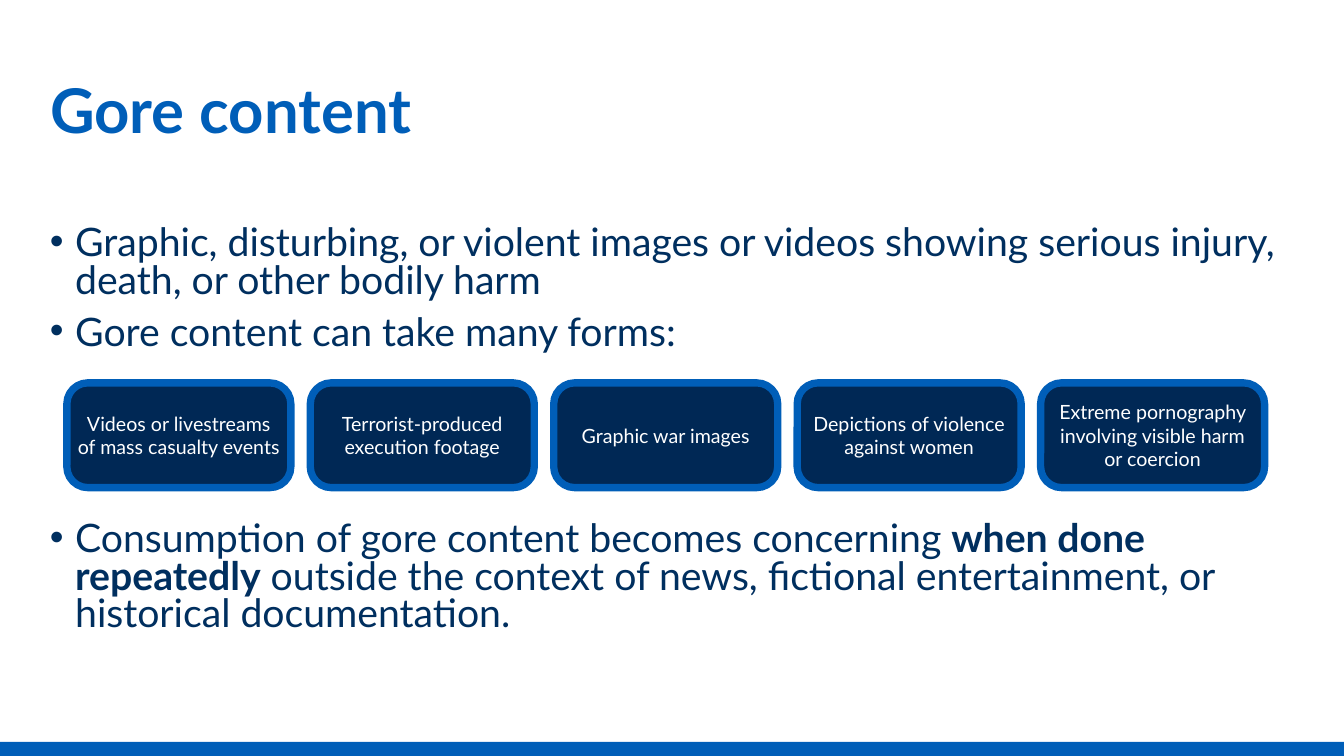
from dataclasses import dataclass

from lxml import etree
from pptx import Presentation
from pptx.dml.color import RGBColor
from pptx.enum.shapes import MSO_SHAPE
from pptx.enum.text import MSO_ANCHOR, MSO_AUTO_SIZE, PP_ALIGN
from pptx.oxml.ns import qn
from pptx.slide import Slide
from pptx.util import Pt

RECTANGLE = MSO_SHAPE.RECTANGLE
ROUNDED = MSO_SHAPE.ROUNDED_RECTANGLE
MIDDLE = MSO_ANCHOR.MIDDLE
NO_AUTOFIT = MSO_AUTO_SIZE.NONE
LEFT = PP_ALIGN.LEFT
CENTER = PP_ALIGN.CENTER

FONT = "Lato"
COLORS = {"blue": "005EB8", "text": "002F5F", "navy": "002855", "white": "FFFFFF"}
SLIDE_WIDTH, SLIDE_HEIGHT = 960, 540
MARGIN = 28.6
BAR_HEIGHT = 10.08
BULLET_INDENT = 18

CARD_LEFT, CARD_TOP = 47.8, 273.5
CARD_WIDTH, CARD_HEIGHT = 160, 74.8
CARD_PITCH = 173.88


@dataclass
class Bullet:
    text: str
    bold: str = ""
    ending: str = ""


@dataclass
class BulletBlock:
    top: float
    height: float
    bullets: list[Bullet]


BULLET_BLOCKS = [
    BulletBlock(158.4, 104, [
        Bullet("Graphic, disturbing, or violent images or videos showing serious injury, "
               "death, or other bodily harm"),
        Bullet("Gore content can take many forms:"),
    ]),
    BulletBlock(369.7, 96, [
        Bullet("Consumption of gore content becomes concerning ",
               bold="when done repeatedly",
               ending=" outside the context of news, fictional entertainment, "
                      "or historical documentation."),
    ]),
]
GORE_FORMS = [
    "Videos or livestreams of mass casualty events",
    "Terrorist-produced execution footage",
    "Graphic war images",
    "Depictions of violence against women",
    "Extreme pornography involving visible harm or coercion",
]


def color(name: str) -> RGBColor:
    return RGBColor.from_string(COLORS[name])


def set_font(paragraph, size: float, color_name: str) -> None:
    paragraph.font.name = FONT
    paragraph.font.size = Pt(size)
    paragraph.font.color.rgb = color(color_name)


def add_title(slide: Slide, text: str) -> None:
    title = slide.shapes.title
    title.left, title.top = Pt(MARGIN), Pt(28.8)
    title.width, title.height = Pt(687.6), Pt(104.4)
    frame = title.text_frame
    frame.text = text
    frame.auto_size = NO_AUTOFIT
    frame.vertical_anchor = MIDDLE
    heading = frame.paragraphs[0]
    heading.alignment = LEFT
    heading.line_spacing = 0.9
    set_font(heading, 44, "blue")
    heading.font.bold = True


def add_bullet_block(slide: Slide, block: BulletBlock) -> None:
    body = slide.shapes.add_textbox(
        Pt(MARGIN), Pt(block.top), Pt(894.24), Pt(block.height))
    frame = body.text_frame
    frame.word_wrap = True
    for index, bullet in enumerate(block.bullets):
        paragraph = frame.add_paragraph() if index else frame.paragraphs[0]
        properties = paragraph._p.get_or_add_pPr()
        properties.set("marL", str(Pt(BULLET_INDENT)))
        properties.set("indent", str(-Pt(BULLET_INDENT)))
        etree.SubElement(properties, qn("a:buFont"), typeface="Arial")
        etree.SubElement(properties, qn("a:buChar"), char="•")
        paragraph.line_spacing = 0.8
        if index:
            paragraph.space_before = Pt(10)
        set_font(paragraph, 28, "text")
        paragraph.add_run().text = bullet.text
        if bullet.bold:
            emphasis = paragraph.add_run()
            emphasis.text = bullet.bold
            emphasis.font.bold = True
            paragraph.add_run().text = bullet.ending


def add_card(slide: Slide, left: float, text: str) -> None:
    card = slide.shapes.add_shape(
        ROUNDED, Pt(left), Pt(CARD_TOP), Pt(CARD_WIDTH), Pt(CARD_HEIGHT))
    card.adjustments[0] = 0.2
    card.shadow.inherit = False
    card.fill.solid()
    card.fill.fore_color.rgb = color("navy")
    card.line.color.rgb = color("blue")
    card.line.width = Pt(5.25)
    frame = card.text_frame
    frame.word_wrap = True
    frame.vertical_anchor = MIDDLE
    frame.margin_left = frame.margin_right = Pt(2)
    frame.text = text
    frame.paragraphs[0].alignment = CENTER
    set_font(frame.paragraphs[0], 14, "white")


def add_bottom_bar(slide: Slide) -> None:
    bar = slide.shapes.add_shape(
        RECTANGLE, 0, Pt(SLIDE_HEIGHT - BAR_HEIGHT), Pt(SLIDE_WIDTH), Pt(BAR_HEIGHT))
    bar.shadow.inherit = False
    bar.fill.solid()
    bar.fill.fore_color.rgb = color("blue")
    bar.line.fill.background()


def main() -> None:
    presentation = Presentation()
    presentation.slide_width = Pt(SLIDE_WIDTH)
    presentation.slide_height = Pt(SLIDE_HEIGHT)
    slide = presentation.slides.add_slide(presentation.slide_layouts[5])
    add_bottom_bar(slide)
    add_title(slide, "Gore content")
    for block in BULLET_BLOCKS:
        add_bullet_block(slide, block)
    for index, form in enumerate(GORE_FORMS):
        add_card(slide, CARD_LEFT + index * CARD_PITCH, form)
    presentation.save("out.pptx")


if __name__ == "__main__":
    main()
